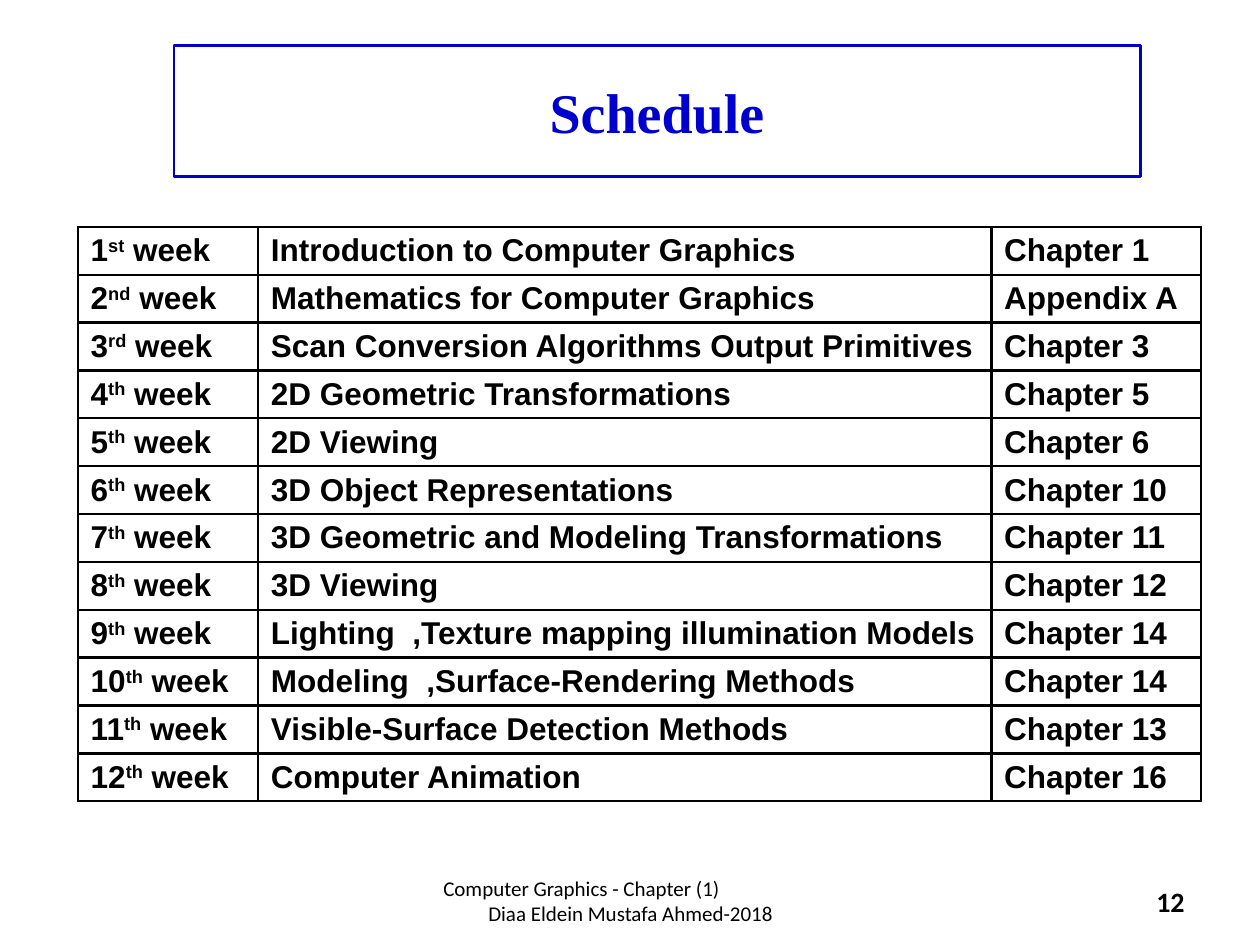
from lxml import etree
from pptx import Presentation, util as u
from pptx.dml.color import RGBColor
from pptx.enum import shapes, text
from pptx.oxml.ns import qn

PLAN = [
    ("st", "Introduction to Computer Graphics", "Chapter 1"),
    ("nd", "Mathematics for Computer Graphics", "Appendix A"),
    ("rd", "Scan Conversion Algorithms Output Primitives", "Chapter 3"),
    ("th", "2D Geometric Transformations", "Chapter 5"),
    ("th", "2D Viewing", "Chapter 6"),
    ("th", "3D Object Representations", "Chapter 10"),
    ("th", "3D Geometric and Modeling Transformations", "Chapter 11"),
    ("th", "3D Viewing", "Chapter 12"),
    ("th", "Lighting  ,Texture mapping illumination Models", "Chapter 14"),
    ("th", "Modeling  ,Surface-Rendering Methods", "Chapter 14"),
    ("th", "Visible-Surface Detection Methods", "Chapter 13"),
    ("th", "Computer Animation", "Chapter 16"),
]
COLS = (1.43, 5.82, 1.66)
ROW = 0.38
FOOT = (3.42, 6.95, 3.17, 0.4)
PAGE = (7.17, 6.95, 2.33, 0.4)
LEFT, MID, RIGHT = (text.PP_ALIGN.LEFT, text.PP_ALIGN.CENTER,
                    text.PP_ALIGN.RIGHT)


def color(code):
    return RGBColor.from_string(code)


def style(run, size, face, tint="000000", bold=False):
    font = run.font
    font.size, font.name, font.bold = u.Pt(size), face, bold
    font.color.rgb = color(tint)


def write(shape, lines, *look):
    frame = shape.text_frame
    frame.word_wrap = True
    frame.vertical_anchor = text.MSO_ANCHOR.MIDDLE
    frame.text = "\n".join(line for line, _ in lines)
    for par, (_, align) in zip(frame.paragraphs, lines):
        par.alignment = align
        style(par.runs[0], *look)


def border(cell):
    props = cell._tc.get_or_add_tcPr()
    for i, side in enumerate("LRTB"):
        line = etree.Element(qn("a:ln" + side), w=str(u.Pt(1.5)))
        fill = etree.SubElement(line, qn("a:solidFill"))
        etree.SubElement(fill, qn("a:srgbClr"), val="000000")
        props.insert(i, line)


def fill_cell(cell, parts):
    cell.fill.background()
    border(cell)
    cell.vertical_anchor = text.MSO_ANCHOR.MIDDLE
    cell.margin_top = cell.margin_bottom = u.Inches(0.04)
    par = cell.text_frame.paragraphs[0]
    props = par._p.get_or_add_pPr()
    props.set("marL", str(u.Inches(0.38)))
    props.set("indent", str(-u.Inches(0.38)))
    for i, part in enumerate(parts):
        run = par.add_run()
        run.text = part
        style(run, 18, "Arial", bold=True)
        if i == 1:
            run.font._element.set("baseline", "30000")


def main():
    deck = Presentation()
    deck.slide_width, deck.slide_height = u.Inches(10), u.Inches(7.5)
    items = deck.slides.add_slide(deck.slide_layouts[6]).shapes

    title = items.add_shape(shapes.MSO_SHAPE.RECTANGLE,
                            *map(u.Inches, (1.38, 0.36, 7.67, 1.04)))
    title.shadow.inherit = False
    title.fill.background()
    title.line.color.rgb = color("0000CC")
    title.line.width = u.Pt(1.5)
    write(title, [("Schedule", MID)], 32, "Times New Roman", "0000CC", True)

    area = (0.62, 1.8, sum(COLS), ROW * len(PLAN))
    table = items.add_table(len(PLAN), len(COLS), *map(u.Inches, area)).table
    table.first_row = table.horz_banding = False
    for col, width in zip(table.columns, COLS):
        col.width = u.Inches(width)
    for r, (suffix, topic, source) in enumerate(PLAN):
        table.rows[r].height = u.Inches(ROW)
        row = ([str(r + 1), suffix, " week"], [topic], [source])
        for c, parts in enumerate(row):
            fill_cell(table.cell(r, c), parts)

    foot = items.add_textbox(*map(u.Inches, FOOT))
    write(foot, [("Computer Graphics - Chapter (1)", LEFT),
                 ("Diaa Eldein Mustafa Ahmed-2018", MID)], 12, "Calibri")
    page = items.add_textbox(*map(u.Inches, PAGE))
    write(page, [("12", RIGHT)], 16, "Calibri", "000000", True)

    deck.save("out.pptx")


if __name__ == "__main__":
    main()
